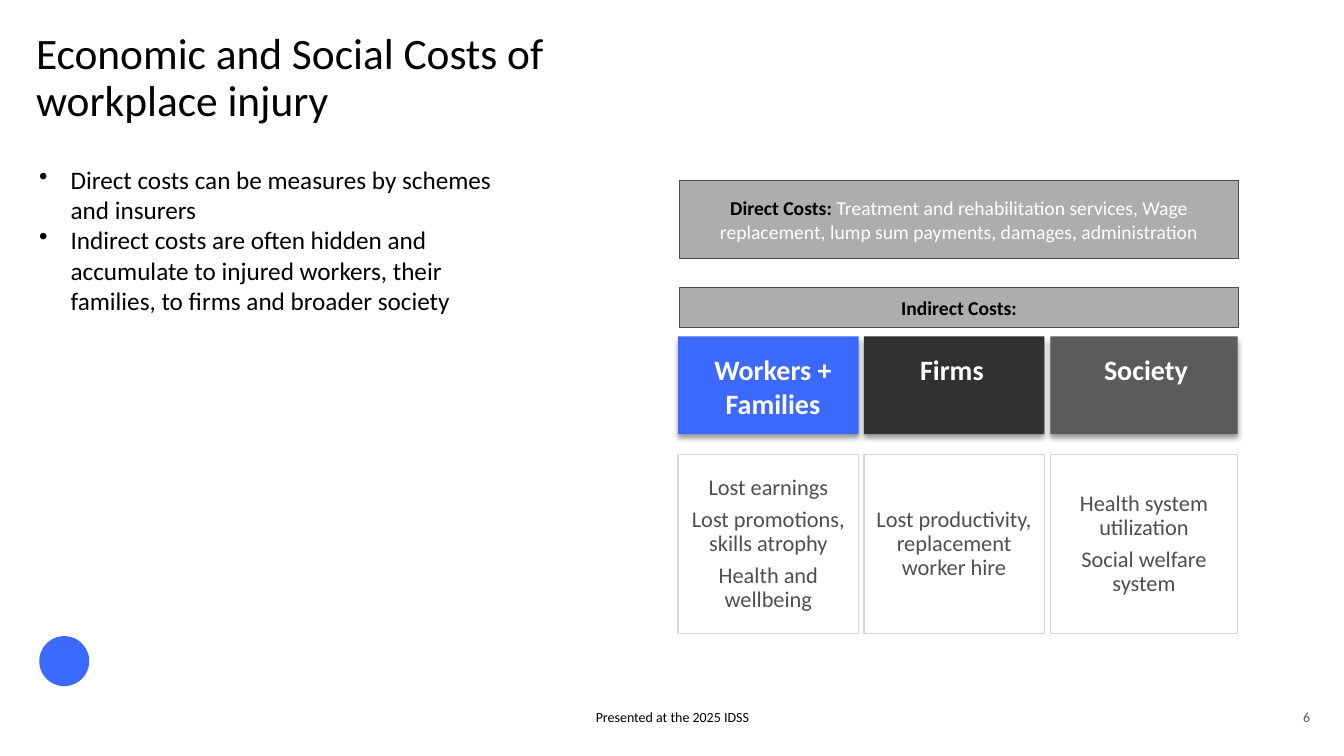
from lxml import etree
from pptx import Presentation
from pptx.dml.color import RGBColor
from pptx.enum.shapes import MSO_SHAPE
from pptx.enum.text import MSO_ANCHOR, PP_ALIGN
from pptx.oxml import parse_xml
from pptx.oxml.ns import nsdecls, qn
from pptx.util import Cm, Pt

RECTANGLE, OVAL = MSO_SHAPE.RECTANGLE, MSO_SHAPE.OVAL
LEFT, CENTER, RIGHT = PP_ALIGN.LEFT, PP_ALIGN.CENTER, PP_ALIGN.RIGHT
TOP, MIDDLE, BOTTOM = MSO_ANCHOR.TOP, MSO_ANCHOR.MIDDLE, MSO_ANCHOR.BOTTOM

BLUE, BLACK, WHITE = "3C69FF", "000000", "FFFFFF"
CHARCOAL, GREY, BAND = "313131", "5B5B5B", "ADADAD"
color = RGBColor.from_string

SHADOW = (
    f'<a:effectLst {nsdecls("a")}>'
    '<a:outerShdw blurRad="50800" dist="38100" dir="5400000" rotWithShape="0">'
    '<a:srgbClr val="000000"><a:alpha val="40000"/></a:srgbClr>'
    '</a:outerShdw></a:effectLst>'
)

deck = Presentation()
deck.slide_width, deck.slide_height = Cm(33.87), Cm(19.05)
page = deck.slides.add_slide(deck.slide_layouts[6])


def add_box(place, fill, line=None, preset=RECTANGLE):
    box = page.shapes.add_shape(preset, *map(Cm, place))
    box.shadow.inherit = False
    box.fill.solid()
    box.fill.fore_color.rgb = color(fill)
    if line:
        box.line.color.rgb = color(line)
        box.line.width = Pt(1)
    else:
        box.line.fill.background()
    return box


def write(target, texts, size, ink, align=LEFT, anchor=TOP, bold=False,
          inset=(0, 0), spacing=1.0, after=0):
    """Fill a shape, or a new text box at the given place, with paragraphs."""
    if isinstance(target, tuple):
        target = page.shapes.add_textbox(*map(Cm, target))
    frame = target.text_frame
    frame.word_wrap = True
    frame.vertical_anchor = anchor
    frame.margin_left = frame.margin_right = Cm(inset[0])
    frame.margin_top = frame.margin_bottom = Cm(inset[1])
    frame.text = "\n".join(texts)
    for para in frame.paragraphs:
        para.alignment = align
        para.line_spacing = spacing
        para.space_after = Pt(after)
        para.font.name = "Calibri"
        para.font.size = Pt(size)
        para.font.bold = bold
        para.font.color.rgb = color(ink)
    return frame.paragraphs


# Title, bullets and footer
write((0.91, 0.81, 15.01, 3.43),
      ["Economic and Social Costs of workplace injury"], 31, BLACK, spacing=0.9)

bullets = write((0.99, 4.14, 11.94, 5.72), [
    "Direct costs can be measures by schemes and insurers",
    "Indirect costs are often hidden and accumulate to injured workers, "
    "their families, to firms and broader society",
], 18, BLACK)
for para in bullets:
    properties = para._p.get_or_add_pPr()
    properties.set("marL", str(Cm(0.79)))
    properties.set("indent", str(-Cm(0.79)))
    bullet = etree.Element(qn("a:buChar"), char="•")
    properties.find(qn("a:defRPr")).addprevious(bullet)

add_box((0.99, 16.03, 1.26, 1.26), BLUE, preset=OVAL)
write((11.23, 17.78, 11.43, 0.51), ["Presented at the 2025 IDSS"], 10, BLACK,
      CENTER, BOTTOM)
write((31.85, 17.78, 1.17, 0.51), ["6"], 10, GREY, RIGHT, BOTTOM)

# Cost columns: left, width, heading colour, heading place, heading, items
columns = [
    (17.09, 4.55, BLUE, (17.12, 4.72), "Workers + Families",
     ["Lost earnings", "Lost promotions, skills atrophy",
      "Health and wellbeing"]),
    (21.77, 4.55, CHARCOAL, (21.69, 4.6), "Firms",
     ["Lost productivity, replacement worker hire"]),
    (26.47, 4.72, GREY, (25.68, 6.4), "Society",
     ["Health system utilization", "Social welfare system"]),
]
for left, width, fill, (text_left, text_width), heading, items in columns:
    header = add_box((left, 8.48, width, 2.46), fill)
    properties = header._element.spPr
    properties.replace(properties.find(qn("a:effectLst")), parse_xml(SHADOW))
    write((text_left, 8.76, text_width, 1.96), [heading], 20, WHITE, CENTER,
          bold=True, inset=(0.25, 0.13))
    write(add_box((left, 11.46, width, 4.5), WHITE, "D6D6D6"), items, 16,
          "4D4F53", CENTER, MIDDLE, inset=(0.1, 0.08), spacing=0.9, after=5.6)

# Direct and indirect cost bands
bands = [
    (4.55, 1.96, "Direct Costs:",
     " Treatment and rehabilitation services, Wage replacement, "
     "lump sum payments, damages, administration"),
    (7.24, 1.02, "Indirect Costs:", ""),
]
for top, height, label, detail in bands:
    band = add_box((17.12, top, 14.1, height), BAND, "4C4C4C")
    para = write(band, [label], 14, BLACK, CENTER, MIDDLE, bold=True,
                 inset=(0.25, 0.13))[0]
    if detail:
        span = para.add_run()
        span.text = detail
        span.font.bold = False
        span.font.color.rgb = color(WHITE)

deck.save("out.pptx")
